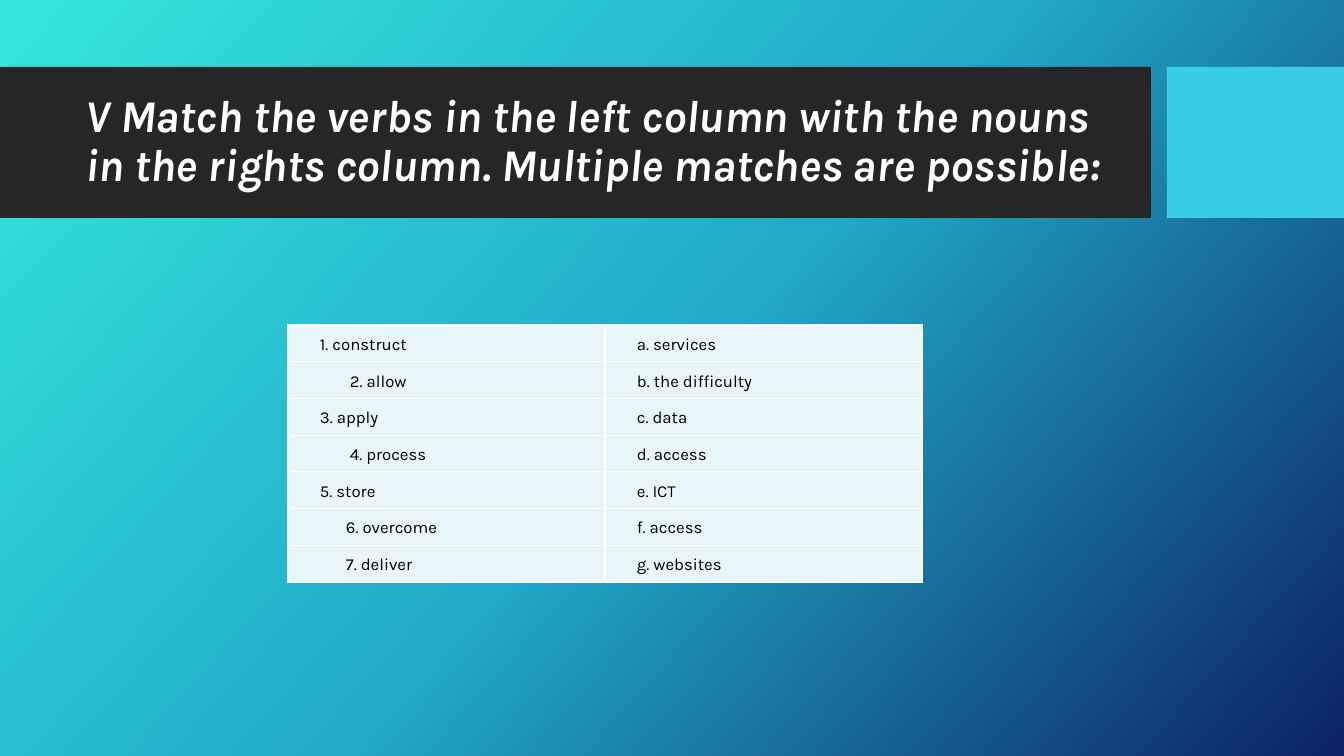
from dataclasses import dataclass

from lxml.etree import SubElement
from pptx import Presentation
from pptx.dml.color import RGBColor
from pptx.enum.shapes import MSO_SHAPE
from pptx.enum.text import MSO_ANCHOR, MSO_AUTO_SIZE, PP_ALIGN
from pptx.oxml import parse_xml
from pptx.oxml.ns import nsdecls, qn
from pptx.util import Emu, Pt

SCALE = 914400 / 100.8


@dataclass(frozen=True)
class Theme:
    font: str = "Karla"
    white: str = "FFFFFF"
    ink: str = "000000"
    bar: str = "262626"
    tab: str = "39CDE7"
    cell: str = "E8F6FA"
    back: tuple = ((0, "36E6DD"), (50, "21ABC8"), (100, "0C2263"))
    angle: int = 42
    title: float = 32.4
    body: int = 12


THEME = Theme()
TITLE = ("V Match the verbs in the left column with the nouns "
         "in the rights column. Multiple matches are possible:")

# Verb, its left indent in px, and the noun beside it
PAIRS = [
    ("1. construct", 50, "a. services"),
    ("2. allow", 80, "b. the difficulty"),
    ("3. apply", 50, "c. data"),
    ("4. process", 80, "d. access"),
    ("5. store", 50, "e. ICT"),
    ("6. overcome", 76, "f. access"),
    ("7. deliver", 76, "g. websites"),
]


def px(num):
    return Emu(round(num * SCALE))


def style(para, size, color, bold=False):
    for run in para.runs:
        font = run.font
        font.name, font.size = THEME.font, Pt(size)
        font.bold = font.italic = bold
        font.color.rgb = RGBColor.from_string(color)


def paint(slide):
    """Fill the background with the three-stop gradient."""
    fill = slide.background.fill
    fill.gradient()
    fill.gradient_angle = 360 - THEME.angle
    stops = next(slide.element.iter(qn("a:gsLst")))
    for stop in list(stops):
        stops.remove(stop)
    for pos, color in THEME.back:
        stop = SubElement(stops, qn("a:gs"), pos=str(pos * 1000))
        SubElement(stop, qn("a:srgbClr"), val=color)


def block(slide, left, top, width, height, color):
    shape = slide.shapes.add_shape(
        MSO_SHAPE.RECTANGLE, px(left), px(top), px(width), px(height))
    shape.shadow.inherit = False
    shape.fill.solid()
    shape.fill.fore_color.rgb = RGBColor.from_string(color)
    shape.line.fill.background()


def header(slide, left, top, width, height):
    """Place the dark bar, the bright tab and the title."""
    tab, gap = 177, 16
    bar = width - tab - gap
    block(slide, left, top, bar, height, THEME.bar)
    block(slide, left + bar + gap, top, tab, height, THEME.tab)

    # Title, brought in front of the bar
    title = slide.shapes.title
    title.left, title.top = px(left + 75), px(top + 16)
    title.width, title.height = px(bar - 92), px(height - 32)
    title.element.getparent().append(title.element)
    frame = title.text_frame
    frame.text = TITLE
    frame.word_wrap = True
    frame.auto_size = MSO_AUTO_SIZE.NONE
    frame.vertical_anchor = MSO_ANCHOR.MIDDLE
    para = frame.paragraphs[0]
    para.alignment = PP_ALIGN.LEFT
    para.line_spacing = 0.9
    style(para, THEME.title, THEME.white, bold=True)


def entry(cell, text, indent):
    """Write one cell with its hanging indent, fill and borders."""
    cell.margin_left = cell.margin_right = px(7)
    cell.margin_top = cell.margin_bottom = px(7)
    cell.fill.solid()
    cell.fill.fore_color.rgb = RGBColor.from_string(THEME.cell)
    cell.text_frame.text = text
    para = cell.text_frame.paragraphs[0]
    props = para._p.get_or_add_pPr()
    props.set("marL", str(px(indent)))
    props.set("indent", str(px(-25)))
    para.line_spacing = 1.15
    style(para, THEME.body, THEME.ink)
    edges = cell._tc.get_or_add_tcPr()
    for spot, side in enumerate("LRTB"):
        edges.insert(spot, parse_xml(
            f'<a:ln{side} {nsdecls("a")} w="{Pt(1)}"><a:solidFill>'
            f'<a:srgbClr val="{THEME.white}"/></a:solidFill></a:ln{side}>'))


def match(slide, left, top, width, height):
    """Place the table of verbs and nouns."""
    table = slide.shapes.add_table(
        len(PAIRS), 2, px(left), px(top), px(width), px(height)).table
    table.first_row = table.horz_banding = False
    for row, (verb, indent, noun) in enumerate(PAIRS):
        entry(table.cell(row, 0), verb, indent)
        entry(table.cell(row, 1), noun, 50)


def main():
    deck = Presentation()
    deck.slide_width, deck.slide_height = px(1344), px(756)
    slide = deck.slides.add_slide(deck.slide_layouts[5])
    paint(slide)
    header(slide, 0, 67, 1344, 151)
    match(slide, 288, 325, 634, 257)
    deck.save("out.pptx")


if __name__ == "__main__":
    main()
